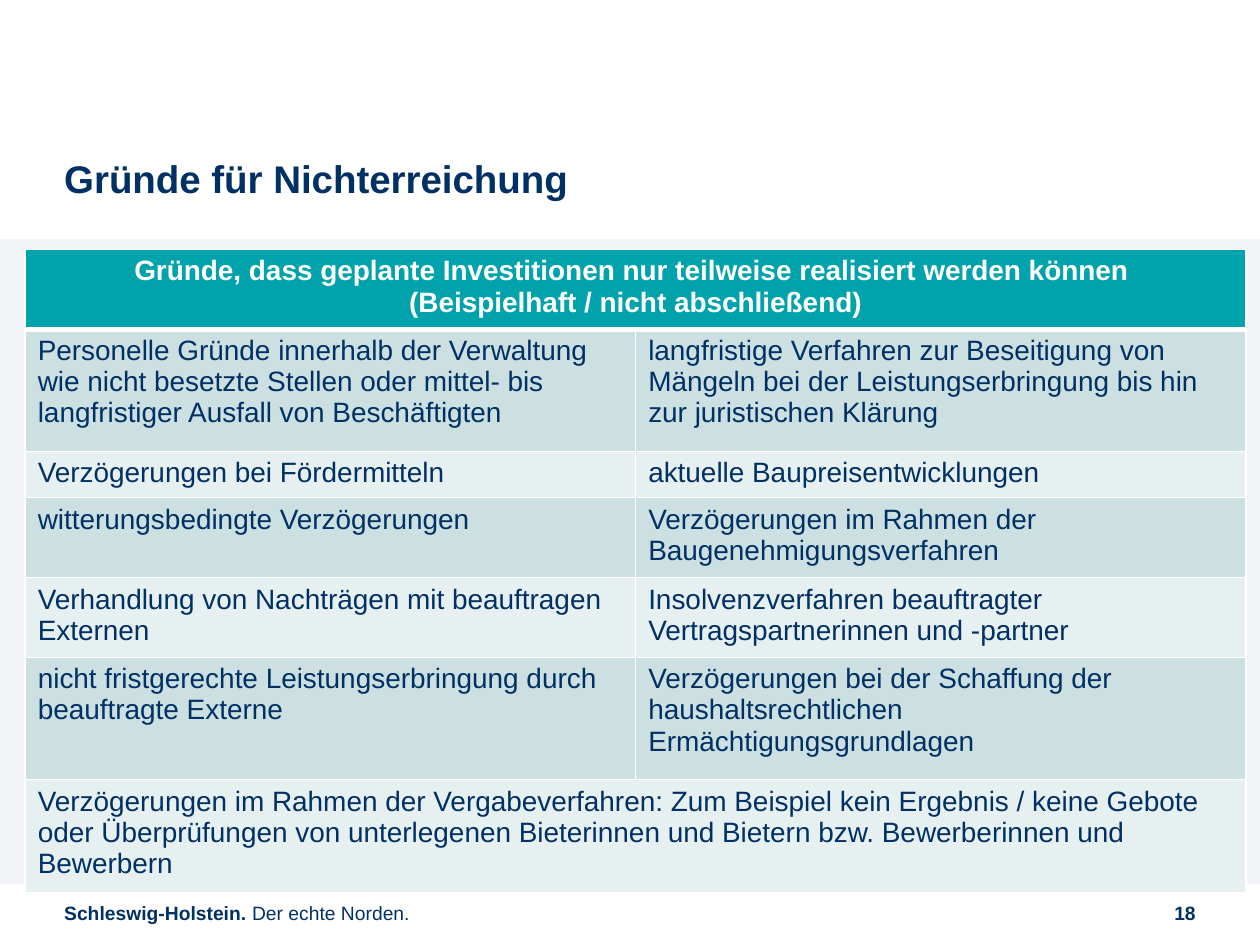
from dataclasses import dataclass
from lxml import etree
from pptx import Presentation
from pptx import util as u
from pptx.dml import color
from pptx.enum import shapes, text
from pptx.oxml import ns


@dataclass(frozen=True)
class Theme:
    font: str = "Arial"
    navy: str = "003064"
    white: str = "FFFFFF"
    panel: str = "F2F4F7"
    teal: str = "00A2AB"
    bands: tuple = ("CCE0E2", "E7F0F1")
    title: int = 22
    body: int = 16
    foot: int = 11


T = Theme()
HEAD = (
    "Gründe, dass geplante Investitionen nur teilweise realisiert werden können ",
    "(Beispielhaft / nicht abschließend)",
)
ROWS = (
    (0.97, "Personelle Gründe innerhalb der Verwaltung wie nicht besetzte Stellen oder "
     "mittel- bis langfristiger Ausfall von Beschäftigten",
     "langfristige Verfahren zur Beseitigung von Mängeln bei der Leistungserbringung "
     "bis hin zur juristischen Klärung"),
    (0.36, "Verzögerungen bei Fördermitteln", "aktuelle Baupreisentwicklungen"),
    (0.61, "witterungsbedingte Verzögerungen",
     "Verzögerungen im Rahmen der Baugenehmigungsverfahren"),
    (0.61, "Verhandlung von Nachträgen mit beauftragen Externen",
     "Insolvenzverfahren beauftragter Vertragspartnerinnen und -partner"),
    (0.97, "nicht fristgerechte Leistungserbringung durch beauftragte Externe",
     "Verzögerungen bei der Schaffung der haushaltsrechtlichen "
     "Ermächtigungsgrundlagen"),
    (0.88, "Verzögerungen im Rahmen der Vergabeverfahren: Zum Beispiel kein Ergebnis / "
     "keine Gebote oder Überprüfungen von unterlegenen Bieterinnen und Bietern bzw. "
     "Bewerberinnen und Bewerbern"),
)


def rgb(tone):
    return color.RGBColor.from_string(tone)


def add_run(para, words, size, tone=T.navy, bold=False):
    run = para.add_run()
    run.text = words
    font = run.font
    font.name, font.size, font.bold = T.font, u.Pt(size), bold
    font.color.rgb = rgb(tone)


def add_text(slide, box, runs, size, anchor, align=text.PP_ALIGN.LEFT, wrap=False):
    frame = slide.shapes.add_textbox(*map(u.Inches, box)).text_frame
    frame.word_wrap = wrap
    frame.vertical_anchor = anchor
    frame.margin_left = frame.margin_right = 0
    frame.margin_top = frame.margin_bottom = 0
    para = frame.paragraphs[0]
    para.alignment = align
    for words, bold in runs:
        add_run(para, words, size, bold=bold)
    return para


def add_panel(slide, box):
    panel = slide.shapes.add_shape(shapes.MSO_SHAPE.RECTANGLE, *map(u.Inches, box))
    panel.shadow.inherit = False
    panel.fill.solid()
    panel.fill.fore_color.rgb = rgb(T.panel)
    panel.line.fill.background()


def add_title(slide, box):
    para = add_text(slide, box, [("Gründe für Nichterreichung", True)],
                    T.title, text.MSO_ANCHOR.BOTTOM, wrap=True)
    para.line_spacing = 1.35


def add_foot(slide, box):
    left, top, width, height = box
    mid = text.MSO_ANCHOR.MIDDLE
    add_text(slide, (left, top, 3.23, height),
             [("Schleswig-Holstein.", True), (" Der echte Norden.", False)], T.foot, mid)
    add_text(slide, (left + width - 0.79, top, 0.79, height),
             [("18", True)], T.foot, mid, text.PP_ALIGN.RIGHT)


def style_cell(cell, tone, top=1, base=1):
    props = cell._tc.get_or_add_tcPr()
    for side, width in zip("LRTB", (1, 1, top, base)):
        line = etree.SubElement(props, ns.qn(f"a:ln{side}"), w=str(u.Pt(width)))
        fill = etree.SubElement(line, ns.qn("a:solidFill"))
        etree.SubElement(fill, ns.qn("a:srgbClr"), val=T.white)
    cell.fill.solid()
    cell.fill.fore_color.rgb = rgb(tone)


def add_grid(slide, box):
    grid = slide.shapes.add_table(len(ROWS) + 1, 2, *map(u.Inches, box)).table
    for col in grid.columns:
        col.width = u.Inches(box[2] / 2)
    grid.rows[0].height = u.Inches(0.58)
    for cell in grid.rows[0].cells:
        style_cell(cell, T.teal, base=3)
    for num, (height, *words) in enumerate(ROWS, 1):
        row = grid.rows[num]
        row.height = u.Inches(height)
        for cell in row.cells:
            style_cell(cell, T.bands[(num - 1) % 2], top=3 if num == 1 else 1)
        for cell, phrase in zip(row.cells, words):
            add_run(cell.text_frame.paragraphs[0], phrase, T.body)
    for num in (0, len(ROWS)):
        grid.cell(num, 0).merge(grid.cell(num, 1))
    frame = grid.cell(0, 0).text_frame
    for para, words in zip((frame.paragraphs[0], frame.add_paragraph()), HEAD):
        para.alignment = text.PP_ALIGN.CENTER
        add_run(para, words, T.body, T.white, True)


def main():
    deck = Presentation()
    deck.slide_width, deck.slide_height = u.Inches(10), u.Inches(7.5)
    slide = deck.slides.add_slide(deck.slide_layouts[6])
    add_panel(slide, (0, 1.9, 10, 5.12))
    add_foot(slide, (0.51, 7.1, 8.98, 0.29))
    add_title(slide, (0.51, 0.6, 6.54, 1))
    add_grid(slide, (0.2, 1.98, 9.69, 4.98))
    deck.save("out.pptx")


if __name__ == "__main__":
    main()
